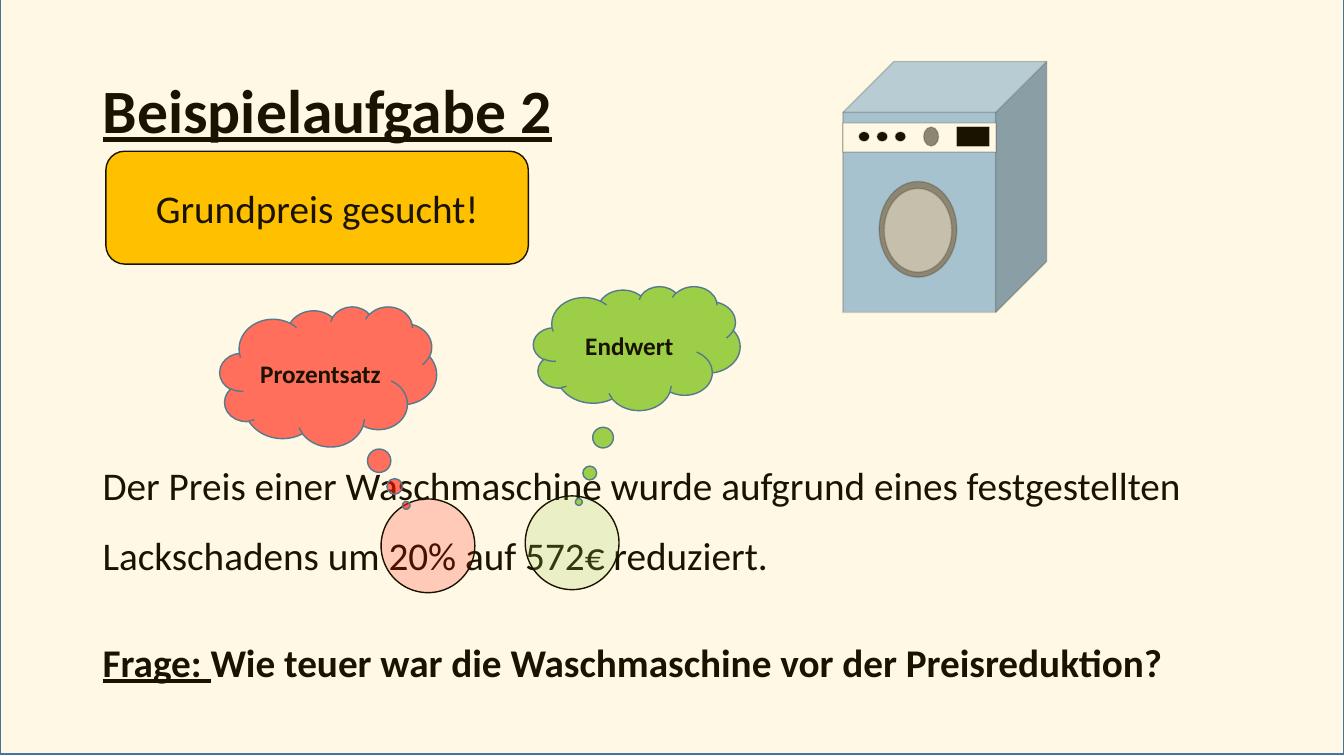
"""Build the slide with the second worked example on finding a base price."""
from dataclasses import dataclass
from typing import Any, Optional

import pptx
import pptx.dml.color
import pptx.enum.shapes
import pptx.enum.text
import pptx.oxml
import pptx.oxml.ns
import pptx.util

Inches = pptx.util.Inches
Pt = pptx.util.Pt
RGBColor = pptx.dml.color.RGBColor
MSO = pptx.enum.shapes.MSO_SHAPE
ALIGN = pptx.enum.text.PP_ALIGN
ANCHOR = pptx.enum.text.MSO_ANCHOR
AUTO_SIZE = pptx.enum.text.MSO_AUTO_SIZE
qn = pptx.oxml.ns.qn

BLACK = RGBColor(0x00, 0x00, 0x00)
WHITE = RGBColor(0xFF, 0xFF, 0xFF)
STEEL = RGBColor(0x9D, 0xC3, 0xE6)
GREY = RGBColor(0x80, 0x80, 0x80)
SILVER = RGBColor(0xBF, 0xBF, 0xBF)
GREEN = RGBColor(0x92, 0xD0, 0x50)
RED = RGBColor(0xFF, 0x00, 0x00)
AMBER = RGBColor(0xFF, 0xC0, 0x00)
BLUE = RGBColor(0x43, 0x73, 0x9E)

BASE = {"name": "Calibri", "size": Pt(28)}
TITLE = BASE | {"size": Pt(44), "bold": True, "underline": True}
QUESTION = BASE | {"bold": True}
LABEL = BASE | {"size": Pt(18), "bold": True}

Box = tuple[float, float, float, float]


@dataclass(frozen=True)
class Figure:
    """A preset shape with its colours, opacity in percent and label."""

    kind: Any
    box: Box
    fill: RGBColor
    line: RGBColor = BLACK
    fill_alpha: int = 100
    line_alpha: int = 100
    adjustments: tuple[float, ...] = ()
    text: str = ""
    font: Optional[dict[str, Any]] = None


def part(kind: Any, box: Box, fill: RGBColor) -> Figure:
    """Describe one part of the washing machine."""
    return Figure(kind, box, fill, line_alpha=20)


KNOBS = [part(MSO.OVAL, (8.52 + 0.18 * i, 1.31, 0.1, 0.09), BLACK) for i in range(3)]
WASHER = [
    part(MSO.CUBE, (8.36, 0.61, 2.02, 2.49), STEEL),
    part(MSO.RECTANGLE, (8.36, 1.22, 1.52, 0.29), WHITE),
    part(MSO.OVAL, (8.72, 1.8, 0.77, 0.95), GREY),
    part(MSO.OVAL, (8.77, 1.87, 0.67, 0.83), SILVER),
    *KNOBS,
    part(MSO.RECTANGLE, (9.49, 1.26, 0.32, 0.19), BLACK),
    part(MSO.OVAL, (9.16, 1.26, 0.15, 0.19), GREY),
]
NOTES = [
    Figure(MSO.OVAL, (5.21, 4.92, 0.93, 0.93), GREEN, fill_alpha=20),
    Figure(MSO.CLOUD_CALLOUT, (5.29, 2.84, 2.05, 1.23), GREEN, BLUE,
           adjustments=(-0.28, 1.24), text="Endwert", font=LABEL),
    Figure(MSO.OVAL, (3.78, 4.95, 0.93, 0.93), RED, fill_alpha=20),
    Figure(MSO.CLOUD_CALLOUT, (2.18, 3.04, 2.15, 1.39), RED, BLUE, fill_alpha=60,
           adjustments=(0.36, 0.92), text="Prozentsatz", font=LABEL),
    Figure(MSO.ROUNDED_RECTANGLE, (1.05, 1.5, 4.19, 1.12), AMBER,
           text="Grundpreis gesucht!", font=BASE),
    Figure(MSO.RECTANGLE, (0, -0.02, 13.33, 7.5), AMBER, BLUE, fill_alpha=10),
]


def set_alpha(parent: Any, percent: int) -> None:
    """Set the opacity of the solid fill below an element."""
    if percent < 100:
        color = parent.find(qn("a:solidFill")).find(qn("a:srgbClr"))
        alpha = pptx.oxml.parse_xml(
            '<a:alpha xmlns:a="http://schemas.openxmlformats.org/drawingml/2006/main" '
            f'val="{percent * 1000}"/>')
        color.append(alpha)


def add_run(p: Any, text: str, font: dict[str, Any]) -> None:
    """Add a black run with the given font values."""
    r = p.add_run()
    r.text = text
    for name, value in font.items():
        setattr(r.font, name, value)
    r.font.color.rgb = BLACK


def draw(shapes: Any, fig: Figure) -> None:
    """Draw a figure into a shape collection."""
    sp = shapes.add_shape(fig.kind, *map(Inches, fig.box))
    sp.shadow.inherit = False
    for i, value in enumerate(fig.adjustments):
        sp.adjustments[i] = value
    sp.fill.solid()
    sp.fill.fore_color.rgb = fig.fill
    sp.line.color.rgb = fig.line
    sp.line.width = Pt(1)
    spPr = sp.element.spPr
    set_alpha(spPr, fig.fill_alpha)
    set_alpha(spPr.find(qn("a:ln")), fig.line_alpha)
    if fig.text:
        tf = sp.text_frame
        tf.vertical_anchor = ANCHOR.MIDDLE
        p = tf.paragraphs[0]
        p.alignment = ALIGN.CENTER
        add_run(p, fig.text, fig.font or BASE)


def add_title(s: Any) -> None:
    """Place and format the title placeholder."""
    sp = s.shapes.title
    sp.left, sp.top, sp.width, sp.height = map(Inches, (0.92, 0.4, 11.5, 1.45))
    tf = sp.text_frame
    tf.vertical_anchor = ANCHOR.MIDDLE
    p = tf.paragraphs[0]
    p.alignment = ALIGN.LEFT
    p.line_spacing = 0.9
    add_run(p, "Beispielaufgabe 2", TITLE)


def add_texts(s: Any) -> None:
    """Add the task and the question."""
    tf = s.shapes.add_textbox(*map(Inches, (0.92, 4.29, 11.5, 3.67))).text_frame
    tf.word_wrap = True
    p = tf.paragraphs[0]
    p.line_spacing = 1.5
    p.space_before = Pt(10)
    add_run(p, "Der Preis einer Waschmaschine wurde aufgrund eines festgestellten "
               "Lackschadens um 20% auf 572€ reduziert.", BASE)

    tf = s.shapes.add_textbox(*map(Inches, (0.92, 6.28, 10.75, 0.57))).text_frame
    tf.word_wrap = False
    tf.auto_size = AUTO_SIZE.SHAPE_TO_FIT_TEXT
    p = tf.paragraphs[0]
    add_run(p, "Frage: ", QUESTION | {"underline": True})
    add_run(p, "Wie teuer war die Waschmaschine vor der Preisreduktion?", QUESTION)


def main() -> None:
    """Build and save the presentation."""
    prs = pptx.Presentation()
    prs.slide_width, prs.slide_height = Inches(13.33), Inches(7.5)
    s = prs.slides.add_slide(prs.slide_layouts[5])
    washer = s.shapes.add_group_shape()
    for fig in WASHER:
        draw(washer.shapes, fig)
    add_title(s)
    add_texts(s)
    for fig in NOTES:
        draw(s.shapes, fig)
    prs.save("out.pptx")


if __name__ == "__main__":
    main()
